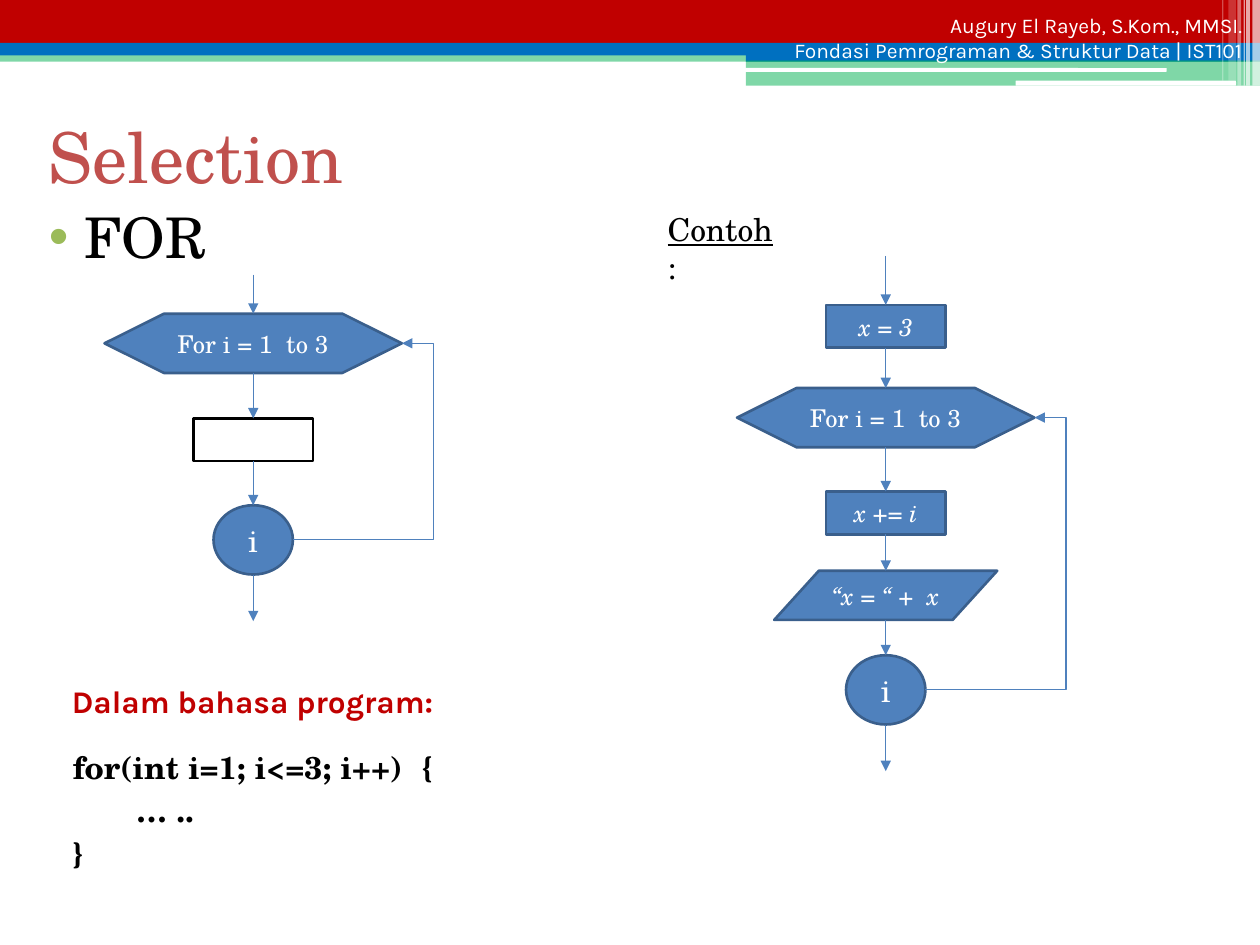
from lxml import etree
from pptx import Presentation
from pptx.dml.color import RGBColor
from pptx.enum.shapes import MSO_CONNECTOR, MSO_SHAPE
from pptx.enum.text import MSO_ANCHOR, MSO_AUTO_SIZE, PP_ALIGN
from pptx.oxml.ns import qn
from pptx.util import Inches, Pt

RECT, ROUND = MSO_SHAPE.RECTANGLE, MSO_SHAPE.ROUNDED_RECTANGLE
PREP, STEP = MSO_SHAPE.FLOWCHART_PREPARATION, MSO_SHAPE.FLOWCHART_PROCESS
DATA, NODE = MSO_SHAPE.FLOWCHART_DATA, MSO_SHAPE.FLOWCHART_CONNECTOR
LINE, ELBOW = MSO_CONNECTOR.STRAIGHT, MSO_CONNECTOR.ELBOW
LEFT, MID, RIGHT = PP_ALIGN.LEFT, PP_ALIGN.CENTER, PP_ALIGN.RIGHT
TOP, CENTER, BASE = MSO_ANCHOR.TOP, MSO_ANCHOR.MIDDLE, MSO_ANCHOR.BOTTOM

WHITE = RGBColor(0xFF, 0xFF, 0xFF)
BLACK = RGBColor(0, 0, 0)
RED = RGBColor(0xC0, 0, 0)
ROSE = RGBColor(0xC0, 0x50, 0x4D)
GREEN = RGBColor(0, 0xB0, 0x50)
BLUE = RGBColor(0, 0x70, 0xC0)
STEEL = RGBColor(0x4F, 0x81, 0xBD)
NAVY = RGBColor(0x3A, 0x5F, 0x8C)
SANS, SERIF = "Karla", "TeX Gyre Schola"

# The slide is a grid of 1000 columns by 750 rows
COLS, ROWS = 1000, 750
CELL = Inches(0.01)

# Header: shape, (left, top, width, height), colour, opacity in percent
BANDS = [
    (RECT, (0, 40, COLS, 9), GREEN, 50),
    (RECT, (0, 0, COLS, 34), RED, 100),
    (RECT, (0, 34, COLS, 10), BLUE, 100),
    (RECT, (592, 39, 408, 10), BLUE, 100),
    (RECT, (592, 48, 408, 20), GREEN, 50),
    (ROUND, (591, 54, 335, 3), WHITE, 100),
    (ROUND, (806, 64, 175, 4), WHITE, 100),
]
# Stripes at the right edge: left, width, height, opacity
STRIPES = [(994, 6, 68, 65), (989, 3, 68, 65), (987, 1, 68, 60),
           (982, 3, 68, 40), (975, 6, 64, 20), (970, 1, 64, 30)]

# Text: format values of a run
HEAD = dict(name=SANS, size=Pt(12), color=WHITE)
TITLE = dict(name=SANS, size=Pt(18), color=RED, bold=True)
TOPIC = dict(name=SERIF, size=Pt(40), color=ROSE)
POINT = dict(name=SERIF, size=Pt(32), color=BLACK)
NOTE = dict(name=SERIF, size=Pt(18), color=BLACK)
CODE = dict(NOTE, bold=True)
LABEL = dict(name=SERIF, size=Pt(14), color=WHITE)
VALUE = dict(LABEL, italic=True)
COUNT = dict(LABEL, size=Pt(18))

# Text boxes: place, anchor, alignment, paragraphs (runs, indent, first line, bullet)
BOXES = [
    ((108, -3, 888, 66), CENTER, RIGHT, [
        ([("Augury El Rayeb, S.Kom., MMSI.", HEAD)], 0, 0, None),
        ([("Fondasi Pemrograman & Struktur Data | IST101", HEAD)], 0, 0, None)]),
    ((17, 85, 558, 640), TOP, LEFT, [
        ([("Selection", TOPIC)], 12, 0, None),
        ([("FOR", POINT)], 40, -28, "•")]),
    ((520, 162, 110, 40), TOP, LEFT, [
        ([("Contoh", dict(NOTE, underline=True)), (":", NOTE)], 0, 0, None)]),
    ((47, 589, 370, 132), TOP, LEFT, [
        ([("for(int i=1; i<=3; i++)  {", CODE)], 1, 0, None),
        ([("\t… ..", CODE)], 1, 0, None),
        ([("}", CODE)], 1, 0, None)]),
]
TITLE_AT = (47, 513, 370, 63)
TITLE_TEXT = "Dalam bahasa program:"

# Flowcharts: centre column, top row, steps (shape, text, format, gap above), last gap
SIZES = {PREP: (236, 47), STEP: (95, 34), DATA: (177, 39), NODE: (63, 55)}
CHARTS = [
    (201, 218, [(PREP, "For i = 1  to 3", LABEL, 31), (STEP, "", VALUE, 36),
                (NODE, "i", COUNT, 35)], 37),
    (703, 203, [(STEP, "x = 3", VALUE, 39), (PREP, "For i = 1  to 3", LABEL, 32),
                (STEP, "x += i", VALUE, 35), (DATA, "“x = “ +  x", VALUE, 29),
                (NODE, "i", COUNT, 28)], 37),
]
LOOP_OUT = 25


def cells(spot):
    return [int(n * CELL) for n in spot]


def add_node(owner, tag, **attrs):
    return etree.SubElement(owner, qn(tag), attrs)


def add_run(para, text, style):
    run = para.add_run()
    run.text = text
    for key, value in style.items():
        if key == "color":
            run.font.color.rgb = value
        else:
            setattr(run.font, key, value)


def add_shape(slide, kind, spot, fill, edge=None, alpha=100):
    shape = slide.shapes.add_shape(kind, *cells(spot))
    shape.shadow.inherit = False
    shape.fill.solid()
    shape.fill.fore_color.rgb = fill
    if alpha < 100:
        tint = shape.fill._xPr.find(".//" + qn("a:srgbClr"))
        add_node(tint, "a:alpha", val=str(alpha * 1000))
    if edge is None:
        shape.line.fill.background()
    else:
        shape.line.color.rgb = edge
        shape.line.width = Pt(1.5)
    return shape


def add_box(slide, spot, anchor, align, paras):
    frame = slide.shapes.add_textbox(*cells(spot)).text_frame
    frame.word_wrap = True
    frame.vertical_anchor = anchor
    for i, (runs, inset, first, mark) in enumerate(paras):
        para = frame.add_paragraph() if i else frame.paragraphs[0]
        props = para._p.get_or_add_pPr()
        props.set("marL", str(inset * CELL))
        props.set("indent", str(first * CELL))
        if mark:
            tint = add_node(props, "a:buClr")
            add_node(tint, "a:srgbClr", val="9BBB59")
            add_node(props, "a:buFont", typeface="Arial")
            add_node(props, "a:buChar", char=mark)
        if runs[0][0].startswith("\t"):
            tabs = add_node(props, "a:tabLst")
            add_node(tabs, "a:tab", pos=str(100 * CELL), algn="l")
        para.alignment = align
        if i and inset:
            para.space_before = Pt(3)
        for text, style in runs:
            add_run(para, text, style)


def add_arrow(slide, kind, start, end):
    arrow = slide.shapes.add_connector(kind, *cells(start + end))
    arrow.line.color.rgb = STEEL
    arrow.line.width = Pt(0.75)
    add_node(arrow.line._get_or_add_ln(), "a:tailEnd", type="triangle")
    add_node(arrow._element.spPr, "a:effectLst")
    return arrow


def add_flow(slide, mid, top, steps, last):
    prior = None
    for kind, text, style, gap in steps:
        wide, high = SIZES[kind]
        row = top + gap
        fill, edge = (STEEL, NAVY) if text else (WHITE, BLACK)
        shape = add_shape(slide, kind, (mid - wide / 2, row, wide, high), fill, edge)
        if text:
            frame = shape.text_frame
            frame.vertical_anchor = CENTER
            frame.paragraphs[0].alignment = MID
            add_run(frame.paragraphs[0], text, style)
        arrow = add_arrow(slide, LINE, (mid, top), (mid, row))
        if prior and prior[0] == STEP:
            arrow.begin_connect(prior[1], 2)
        if kind == STEP:
            arrow.end_connect(shape, 0)
        if kind == PREP:
            goal = (mid + wide / 2, row + high / 2)
        prior, top = (kind, shape), row + high
    add_arrow(slide, LINE, (mid, top), (mid, top + last))

    # Loop back from the counter to the condition
    start = (mid + wide / 2, top - high / 2)
    loop = add_arrow(slide, ELBOW, start, goal)
    span = goal[0] - start[0]
    bend = round((span + LOOP_OUT) / span * 100000)
    guides = loop._element.spPr.find(qn("a:prstGeom")).get_or_add_avLst()
    add_node(guides, "a:gd", name="adj1", fmla=f"val {bend}")


def main():
    deck = Presentation()
    deck.slide_width, deck.slide_height = cells((COLS, ROWS))
    slide = deck.slides.add_slide(deck.slide_layouts[5])

    # Header
    for kind, spot, color, alpha in BANDS:
        add_shape(slide, kind, spot, color, alpha=alpha)
    for left, wide, high, alpha in STRIPES:
        add_shape(slide, RECT, (left, 0, wide, high), WHITE, alpha=alpha)

    # Title and text
    title = slide.shapes.title
    title.left, title.top, title.width, title.height = cells(TITLE_AT)
    frame = title.text_frame
    frame.auto_size = MSO_AUTO_SIZE.NONE
    frame.vertical_anchor = BASE
    frame.paragraphs[0].alignment = LEFT
    add_run(frame.paragraphs[0], TITLE_TEXT, TITLE)
    for box in BOXES:
        add_box(slide, *box)

    # Flowcharts
    for chart in CHARTS:
        add_flow(slide, *chart)
    deck.save("out.pptx")


if __name__ == "__main__":
    main()
